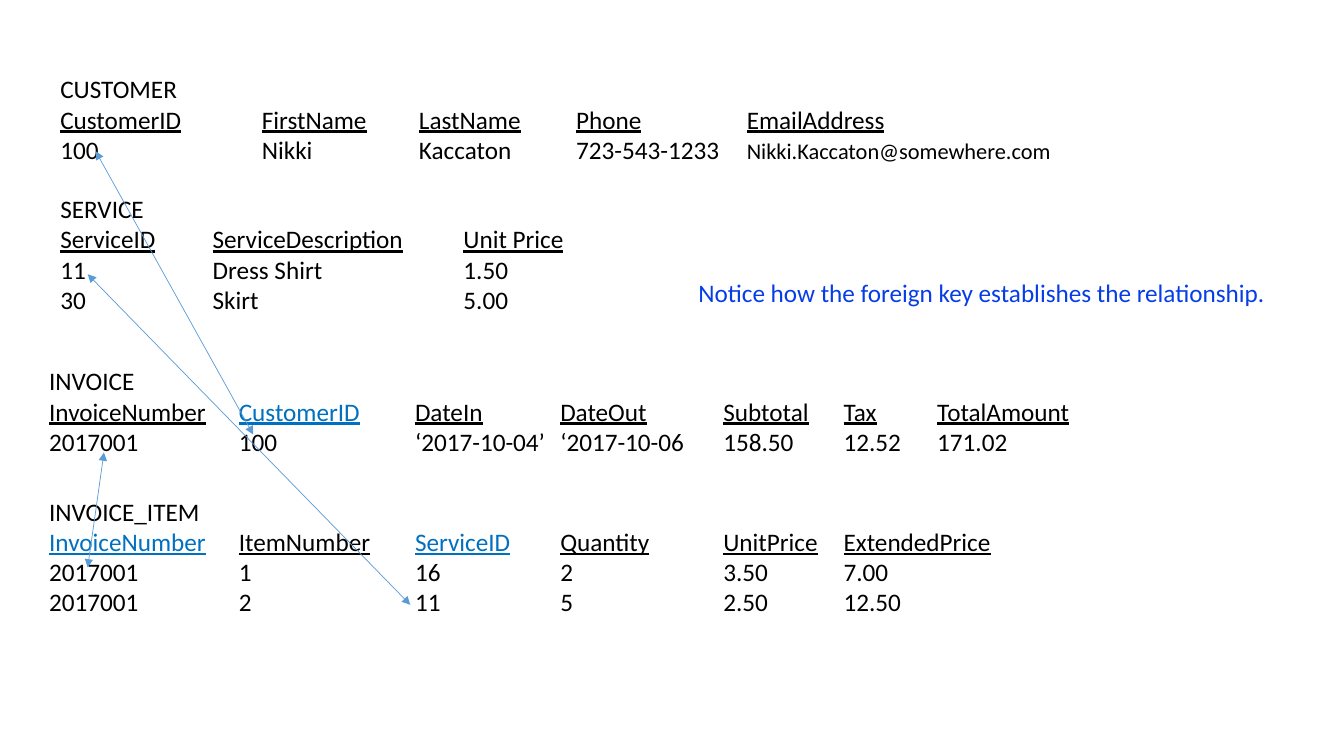
from lxml.etree import SubElement
from pptx import Presentation
from pptx.dml.color import RGBColor
from pptx.enum.shapes import MSO_CONNECTOR as Connector
from pptx.oxml.ns import qn
from pptx.util import Cm, Pt

COLORS = {"text": "000000", "foreign_key": "0070C0", "note": "063DE8", "link": "5B9BD5"}

deck = Presentation()
deck.slide_width, deck.slide_height = Cm(33.87), Cm(19.05)
slide = deck.slides.add_slide(deck.slide_layouts[6])


def add_text_frame(left, top, width, height):
    frame = slide.shapes.add_textbox(Cm(left), Cm(top), Cm(width), Cm(height)).text_frame
    frame.word_wrap = True
    return frame


def add_words(paragraph, words, color="text", size=18, underline=False):
    run = paragraph.add_run()
    run.text = words
    font_format = {"name": "Calibri", "size": Pt(size), "underline": underline}
    for attribute, value in font_format.items():
        setattr(run.font, attribute, value)
    run.font.color.rgb = RGBColor.from_string(COLORS[color])


note = add_text_frame(17.35, 6.86, 15.21, 1.02)
add_words(note.paragraphs[0], "Notice how the foreign key establishes the relationship.", "note")

invoice_tabs = [4.78, 9.22, 12.88, 16.99, 20.02, 22.38]
relations = [
    ("SERVICE", (1.27, 4.75, 14.15, 3.33), [3.84, 10.16], None, [
        ["ServiceID", "ServiceDescription", "Unit Price"],
        ["11", "Dress Shirt", "1.50"],
        ["30", "Skirt", "5.00"],
    ]),
    ("CUSTOMER", (1.27, 1.73, 26.49, 3.33), [5.08, 9.04, 13, 17.3], None, [
        ["CustomerID", "FirstName", "LastName", "Phone", "EmailAddress"],
        ["100", "Nikki", "Kaccaton", "723-543-1233", "Nikki.Kaccaton@somewhere.com"],
    ]),
    ("INVOICE", (0.99, 9.09, 26.49, 2.57), invoice_tabs, ["CustomerID"], [
        ["InvoiceNumber", "CustomerID", "DateIn", "DateOut", "Subtotal", "Tax", "TotalAmount"],
        ["2017001", "100", "‘2017-10-04’", "‘2017-10-06", "158.50", "12.52", "171.02"],
    ]),
    ("INVOICE_ITEM", (0.99, 12.37, 26.49, 3.33), invoice_tabs, ["InvoiceNumber", "ServiceID"], [
        ["InvoiceNumber", "ItemNumber", "ServiceID", "Quantity", "UnitPrice", "ExtendedPrice"],
        ["2017001", "1", "16", "2", "3.50", "7.00"],
        ["2017001", "2", "11", "5", "2.50", "12.50"],
    ]),
]

for relation, box, tabs, foreign_keys, rows in relations:
    frame = add_text_frame(*box)
    add_words(frame.paragraphs[0], relation)
    for row_index, row in enumerate(rows):
        line = frame.add_paragraph()
        tab_list = SubElement(line._p.get_or_add_pPr(), qn("a:tabLst"))
        for tab in tabs:
            SubElement(tab_list, qn("a:tab"), pos=str(Cm(tab)), algn="l")
        for column, value in enumerate(row):
            color = "foreign_key" if value in (foreign_keys or []) else "text"
            size = 16 if "@" in value else 18
            add_words(line, "\t" + value if column else value, color, size, row_index == 0)

key_links = [
    (10.34, 15.24, 2.21, 6.91),
    (2.62, 11.4, 2.21, 14.3),
    (6.38, 10.95, 2.41, 3.81),
]
for ends in key_links:
    link = slide.shapes.add_connector(Connector.STRAIGHT, *map(Cm, ends))
    link.line.color.rgb = RGBColor.from_string(COLORS["link"])
    link.line.width = Pt(0.5)
    properties = link._element.spPr
    outline = properties.find(qn("a:ln"))
    for arrowhead in ("a:headEnd", "a:tailEnd"):
        SubElement(outline, qn(arrowhead), type="triangle")
    SubElement(properties, qn("a:effectLst"))

deck.save("out.pptx")
